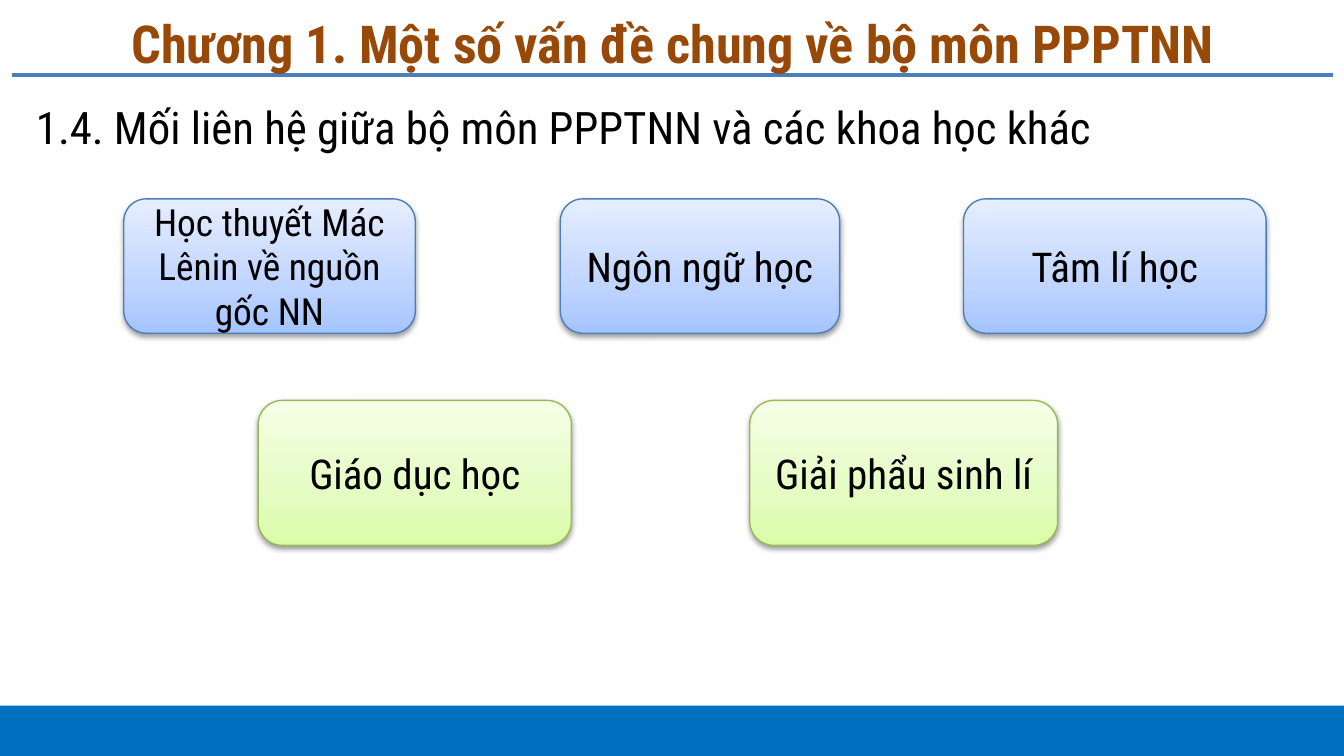
from lxml.etree import SubElement
from pptx import Presentation
from pptx.dml.color import RGBColor
from pptx.enum.shapes import MSO_CONNECTOR as CONN, MSO_SHAPE as SHAPE
from pptx.enum.text import MSO_ANCHOR as ANCHOR, PP_ALIGN as ALIGN
from pptx.oxml.ns import qn
from pptx.util import Cm, Pt

FONT = "Roboto Condensed"
COLORS = {
    "title": "984807",
    "text": "000000",
    "shadow": "000000",
    "footer": "0070C0",
    "blue_line": "4B7EBC",
    "green_line": "98B955",
}
GRADIENTS = {
    "blue": {0: "A4C4FF", 35: "BFD4FF", 100: "E6EEFF"},
    "green": {0: "DAFDA7", 35: "E4FCC2", 100: "F5FFE7"},
}
# Each row: colour, top, height, then (left, width, size, label) per box, in cm and pt
ROWS = [
    ("blue", 3.76, 2.54, [
        (2.34, 5.51, 20, "Học thuyết Mác Lênin về nguồn gốc NN"),
        (10.59, 5.28, 22, "Ngôn ngữ học"),
        (18.21, 5.72, 22, "Tâm lí học"),
    ]),
    ("green", 7.57, 2.74, [
        (4.88, 5.92, 22, "Giáo dục học"),
        (14.17, 5.82, 22, "Giải phẩu sinh lí"),
    ]),
]


def rgb(name):
    return RGBColor.from_string(COLORS[name])


def write(sp, text, size, color="text", bold=False, anchor=ANCHOR.MIDDLE, **para):
    """Fill a shape with one paragraph; para holds paragraph format values."""
    tf = sp.text_frame
    tf.word_wrap = True
    tf.vertical_anchor = anchor
    p = tf.paragraphs[0]
    for name, value in ({"alignment": ALIGN.CENTER} | para).items():
        setattr(p, name, value)
    r = p.add_run()
    r.text = text
    for name, value in {"name": FONT, "size": Pt(size), "bold": bold}.items():
        setattr(r.font, name, value)
    r.font.color.rgb = rgb(color)


def add_text(s, box, text, size, **fmt):
    sp = s.shapes.add_textbox(*map(Cm, box))
    write(sp, text, size, **fmt)


def add_footer(s):
    sp = s.shapes.add_shape(SHAPE.RECTANGLE, Cm(-0.1), Cm(13.34), Cm(25.6), Cm(0.95))
    sp.shadow.inherit = False
    sp.fill.solid()
    sp.fill.fore_color.rgb = rgb("footer")
    sp.line.fill.background()


def add_rule(s):
    line = s.shapes.add_connector(CONN.STRAIGHT, Cm(0.23), Cm(1.42), Cm(25.2), Cm(1.42))
    line.line.color.rgb = rgb("blue_line")
    line.line.width = Pt(2)
    SubElement(line._element.spPr, qn("a:effectLst"))


def set_gradient(sp, stops):
    """Run the stops from the bottom of the shape to its top."""
    sp.fill.gradient()
    sp.fill.gradient_angle = 90
    stop_list = sp._element.spPr.find(".//" + qn("a:gsLst"))
    stop_list.clear()
    for pos, color in stops.items():
        gs = SubElement(stop_list, qn("a:gs"), pos=str(pos * 1000))
        SubElement(gs, qn("a:srgbClr"), val=color)


def set_shadow(sp):
    sp.shadow.inherit = False
    effects = sp._element.spPr.find(qn("a:effectLst"))
    shadow = SubElement(effects, qn("a:outerShdw"), blurRad=str(Pt(3.1)),
                        dist=str(Pt(1.6)), dir="5400000", rotWithShape="0")
    color = SubElement(shadow, qn("a:srgbClr"), val=COLORS["shadow"])
    SubElement(color, qn("a:alpha"), val="38000")


def add_box(s, box, kind, text, size):
    sp = s.shapes.add_shape(SHAPE.ROUNDED_RECTANGLE, *map(Cm, box))
    set_gradient(sp, GRADIENTS[kind])
    sp.line.color.rgb = rgb(kind + "_line")
    sp.line.width = Pt(0.75)
    set_shadow(sp)
    write(sp, text, size)


def main():
    prs = Presentation()
    prs.slide_width, prs.slide_height = Cm(25.4), Cm(14.29)
    s = prs.slides.add_slide(prs.slide_layouts[6])
    add_footer(s)
    add_rule(s)
    add_text(s, (0.43, 0.15, 24.56, 1.3),
             "Chương 1. Một số vấn đề chung về bộ môn PPPTNN", 28,
             color="title", bold=True)
    add_text(s, (0.43, 1.65, 24.56, 11.3),
             "1.4. Mối liên hệ giữa bộ môn PPPTNN và các khoa học khác", 24,
             anchor=ANCHOR.TOP, alignment=ALIGN.JUSTIFY,
             line_spacing=1.1, space_before=Pt(6))
    for kind, top, height, boxes in ROWS:
        for left, width, size, text in boxes:
            add_box(s, (left, top, width, height), kind, text, size)
    prs.save("out.pptx")


if __name__ == "__main__":
    main()
